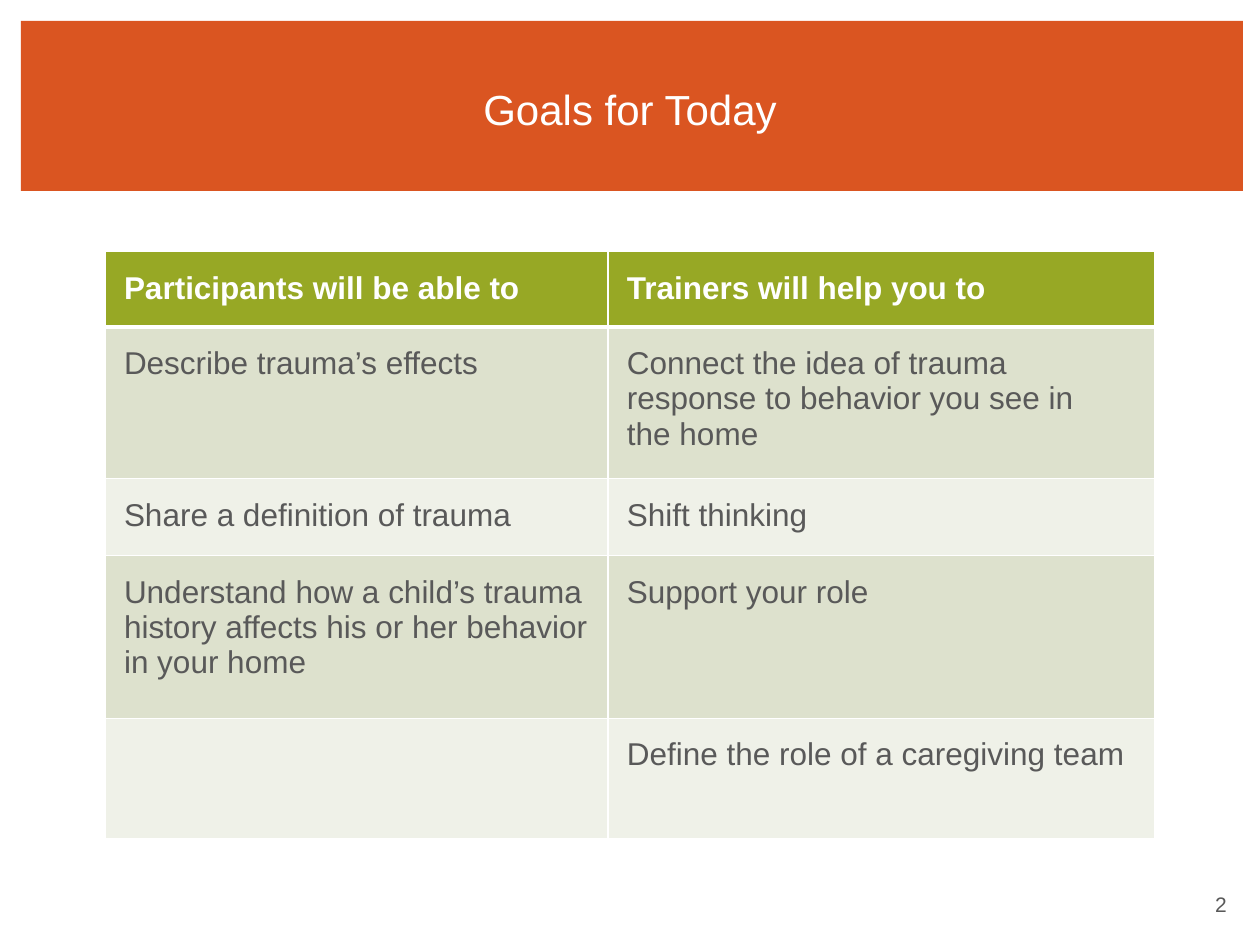
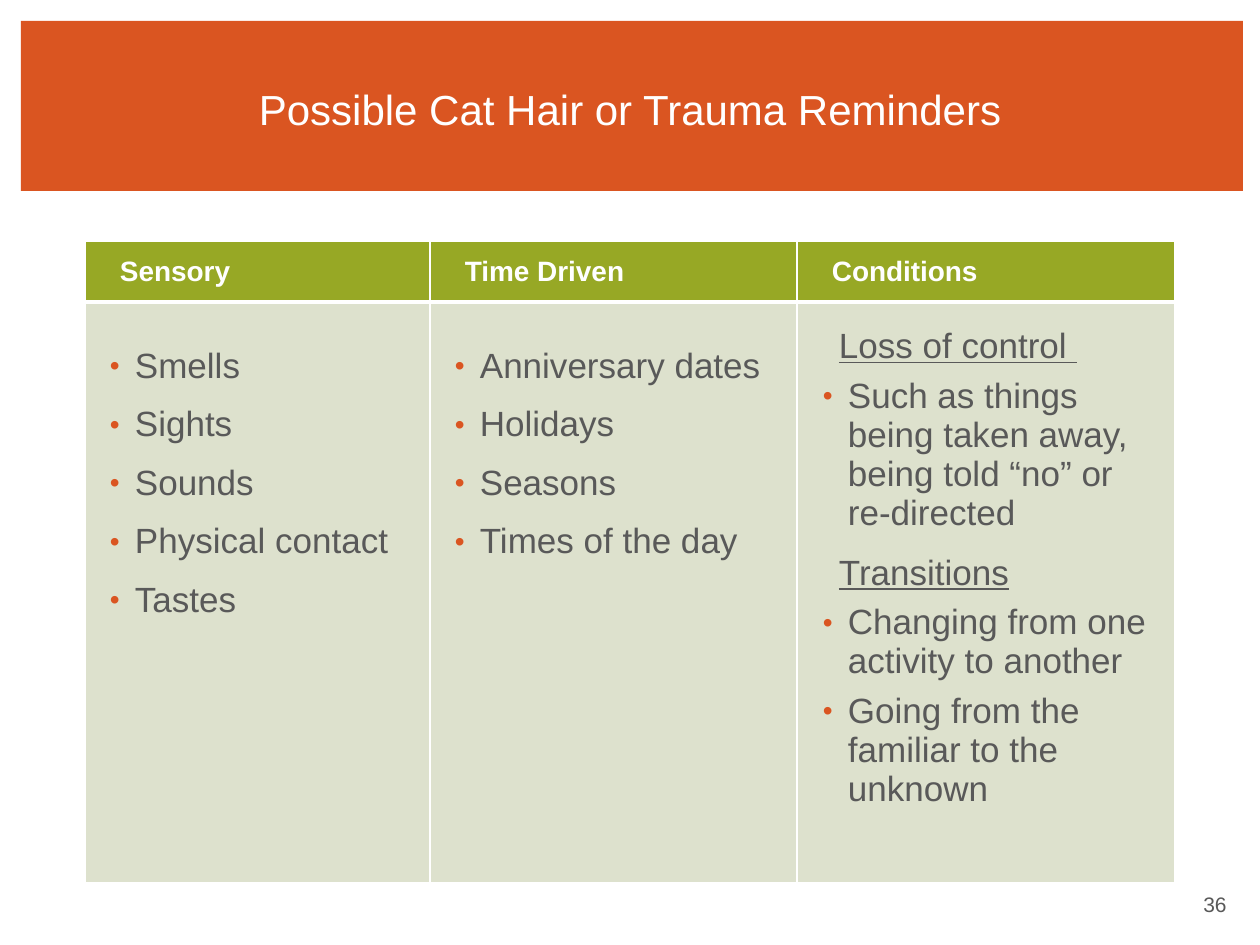
from dataclasses import dataclass

from lxml import etree
from pptx import Presentation
from pptx.dml.color import RGBColor
from pptx.enum.shapes import MSO_SHAPE
from pptx.enum.text import MSO_ANCHOR, PP_ALIGN
from pptx.oxml.ns import qn
from pptx.util import Emu, Pt

RECTANGLE = MSO_SHAPE.RECTANGLE
TOP, MIDDLE = MSO_ANCHOR.TOP, MSO_ANCHOR.MIDDLE
LEFT, CENTER, RIGHT = PP_ALIGN.LEFT, PP_ALIGN.CENTER, PP_ALIGN.RIGHT
EMU_PER_PX = 914400 / 126
TITLE_ONLY = 5


@dataclass(frozen=True)
class Theme:
    font: str = "Arial"
    accent: str = "DA5521"
    header: str = "97A825"
    band_dark: str = "DDE1CD"
    band_light: str = "EFF1E8"
    text: str = "595959"
    white: str = "FFFFFF"
    title_size: int = 24
    list_size: int = 20
    goal_size: int = 18
    header_size: int = 16
    number_size: int = 12
    thin_rule: int = 1
    header_rule: int = 3


THEME = Theme()


@dataclass(frozen=True)
class TextStyle:
    size: int
    color: str = THEME.text
    bold: bool = False
    underline: bool = False
    align: PP_ALIGN = LEFT
    line_spacing: float = 1.0
    space_after: int = 0
    indent: int = 0
    bullet_hang: int = 0


TITLE = TextStyle(THEME.title_size, THEME.white, align=CENTER)
NUMBER = TextStyle(THEME.number_size, align=RIGHT)
GOAL_HEADER = TextStyle(THEME.goal_size, THEME.white, bold=True)
GOAL = TextStyle(THEME.goal_size)
REMINDER_HEADER = TextStyle(THEME.header_size, THEME.white, bold=True, line_spacing=1.5)
REMINDER = TextStyle(THEME.list_size, line_spacing=1.5, indent=25, bullet_hang=25)
CONDITION = TextStyle(THEME.list_size, underline=True, space_after=6, indent=29)
EXAMPLE = TextStyle(THEME.list_size, space_after=6, indent=38, bullet_hang=25)
LAST_EXAMPLE = TextStyle(THEME.list_size, space_after=12, indent=38, bullet_hang=25)

GOAL_ROWS = [
    ("Participants will be able to", "Trainers will help you to"),
    ("Describe trauma’s effects",
     "Connect the idea of trauma response to behavior you see in \nthe home"),
    ("Share a definition of trauma", "Shift thinking"),
    ("Understand how a child’s trauma history affects his or her behavior in your home",
     "Support your role"),
    ("", "Define the role of a caregiving team"),
]
REMINDER_HEADERS = ["Sensory", "Time Driven", "Conditions"]
REMINDER_LISTS = [
    ["Smells", "Sights", "Sounds", "Physical contact", "Tastes"],
    ["Anniversary dates", "Holidays", "Seasons", "Times of the day"],
]
CONDITIONS = [
    ("Loss of control ", CONDITION),
    ("Such as things being taken away, being told “no” or re-directed", LAST_EXAMPLE),
    ("Transitions", CONDITION),
    ("Changing from one activity to another", EXAMPLE),
    ("Going from the familiar to the unknown", EXAMPLE),
]


def px(length):
    return Emu(round(length * EMU_PER_PX))


def rgb(color):
    return RGBColor.from_string(color)


def add_bullet(properties, hang):
    properties.set("indent", str(-px(hang)))
    color = etree.SubElement(properties, qn("a:buClr"))
    etree.SubElement(color, qn("a:srgbClr"), val=THEME.accent)
    etree.SubElement(properties, qn("a:buSzPct"), val="80000")
    etree.SubElement(properties, qn("a:buFont"), typeface=THEME.font)
    etree.SubElement(properties, qn("a:buChar"), char="•")


def write_paragraph(para, text, style):
    para.text = text
    properties = para._p.get_or_add_pPr()
    properties.set("marL", str(px(style.indent)))
    if style.bullet_hang:
        add_bullet(properties, style.bullet_hang)
    para.alignment = style.align
    para.line_spacing = style.line_spacing
    para.space_before = Pt(0)
    para.space_after = Pt(style.space_after)
    font = para.font
    font.name = THEME.font
    font.size = Pt(style.size)
    font.bold = style.bold
    font.underline = style.underline
    font.color.rgb = rgb(style.color)


def write_lines(frame, lines):
    for index, (text, style) in enumerate(lines):
        para = frame.add_paragraph() if index else frame.paragraphs[0]
        write_paragraph(para, text, style)


def add_page(deck, title_text, number):
    page = deck.slides.add_slide(deck.slide_layouts[TITLE_ONLY])
    title = page.shapes.title
    title.left, title.top, title.width, title.height = map(px, (63, 38, 1134, 141))
    title.text_frame.vertical_anchor = MIDDLE
    write_lines(title.text_frame, [(title_text, TITLE)])

    band = page.shapes.add_shape(RECTANGLE, *map(px, (21, 21, 1222, 170)))
    band.shadow.inherit = False
    band.fill.solid()
    band.fill.fore_color.rgb = rgb(THEME.accent)
    band.line.fill.background()
    title.element.addprevious(band.element)

    box = page.shapes.add_textbox(*map(px, (945, 884, 294, 40)))
    box.text_frame.word_wrap = True
    box.text_frame.vertical_anchor = MIDDLE
    write_lines(box.text_frame, [(str(number), NUMBER)])
    return page


def add_grid(page, left, top, columns, rows):
    frame = page.shapes.add_table(len(rows), len(columns), px(left), px(top),
                                  px(sum(columns)), px(sum(rows)))
    table = frame.table
    table.horz_banding = False
    for column, width in zip(table.columns, columns):
        column.width = px(width)
    for row, height in zip(table.rows, rows):
        row.height = px(height)
    return table


def add_borders(cell, top, bottom):
    properties = cell._tc.get_or_add_tcPr()
    widths = {"L": THEME.thin_rule, "R": THEME.thin_rule, "T": top, "B": bottom}
    for side, width in widths.items():
        line = etree.SubElement(properties, qn(f"a:ln{side}"), w=str(Pt(width)))
        fill = etree.SubElement(line, qn("a:solidFill"))
        etree.SubElement(fill, qn("a:srgbClr"), val=THEME.white)


def fill_cell(table, row, column, lines, margins, anchor=TOP):
    cell = table.cell(row, column)
    add_borders(cell,
                THEME.header_rule if row == 1 else THEME.thin_rule,
                THEME.header_rule if row == 0 else THEME.thin_rule)
    cell.fill.solid()
    body_fill = THEME.band_dark if row % 2 else THEME.band_light
    cell.fill.fore_color.rgb = rgb(body_fill if row else THEME.header)
    (cell.margin_left, cell.margin_top,
     cell.margin_right, cell.margin_bottom) = map(px, margins)
    cell.vertical_anchor = anchor
    write_lines(cell.text_frame, lines)


def build_goals(deck):
    page = add_page(deck, "Goals for Today", 2)
    table = add_grid(page, 105, 251, [503, 547], [76, 151, 77, 163, 120])
    for row, texts in enumerate(GOAL_ROWS):
        style, anchor = (GOAL, TOP) if row else (GOAL_HEADER, MIDDLE)
        for column, text in enumerate(texts):
            fill_cell(table, row, column, [(text, style)], (19, 19, 19, 19), anchor)


def build_reminders(deck):
    page = add_page(deck, "Possible Cat Hair or Trauma Reminders", 36)
    table = add_grid(page, 85, 241, [345, 367, 378], [61, 581])
    for column, text in enumerate(REMINDER_HEADERS):
        fill_cell(table, 0, column, [(text, REMINDER_HEADER)], (35, 0, 13, 6))
    for column, items in enumerate(REMINDER_LISTS):
        lines = [(item, REMINDER) for item in items]
        fill_cell(table, 1, column, lines, (25, 25, 13, 6))
    fill_cell(table, 1, 2, CONDITIONS, (13, 25, 13, 6))


def main():
    deck = Presentation()
    deck.slide_width, deck.slide_height = px(1260), px(945)
    build_goals(deck)
    build_reminders(deck)
    deck.save("out.pptx")


if __name__ == "__main__":
    main()
